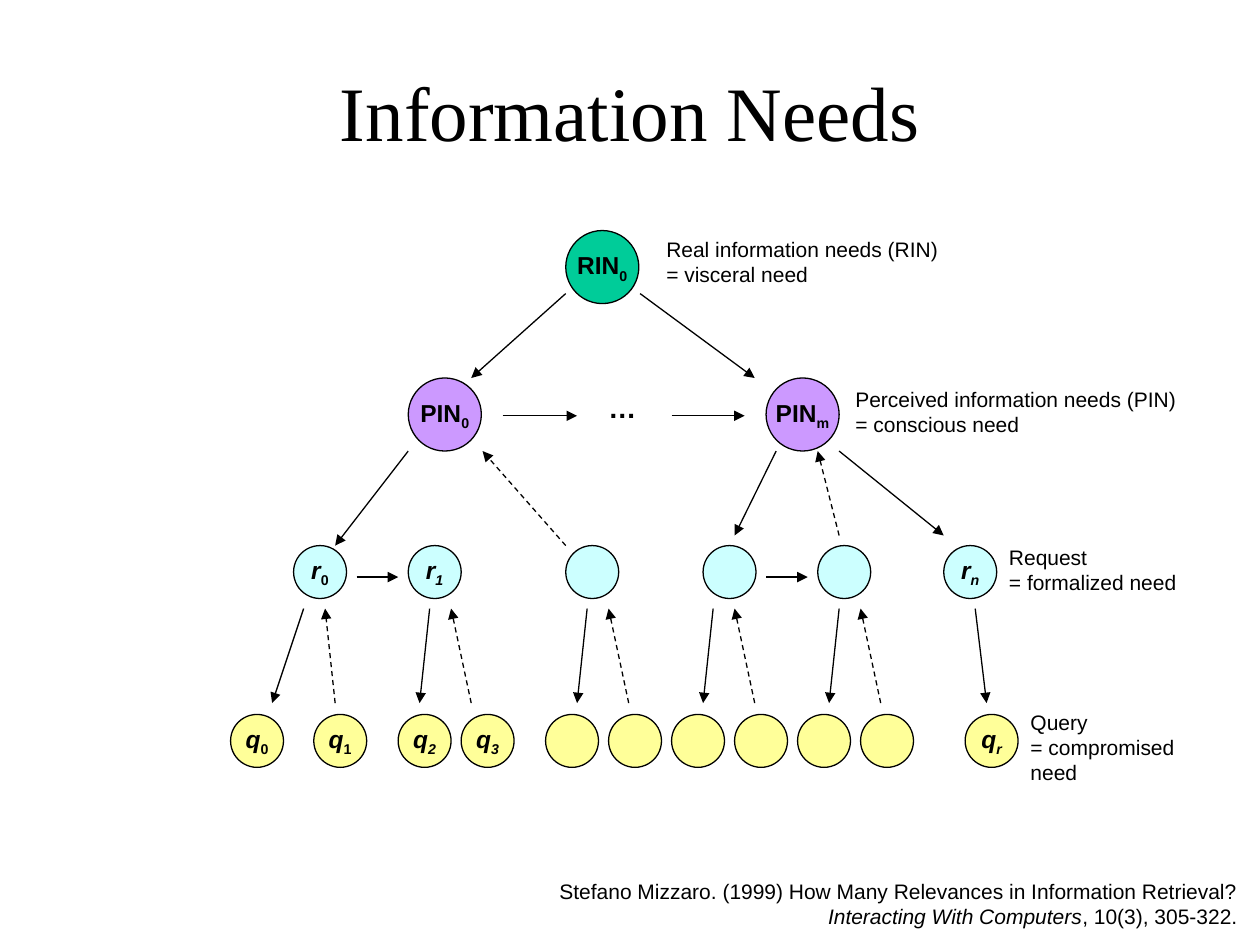
from lxml.etree import SubElement
from pptx import Presentation
from pptx.dml.color import RGBColor
from pptx.enum.dml import MSO_LINE
from pptx.enum.shapes import MSO_CONNECTOR, MSO_SHAPE
from pptx.enum.text import MSO_ANCHOR, PP_ALIGN
from pptx.oxml.ns import qn
from pptx.util import Inches, Pt

BLACK = "000000"
GREEN, PURPLE, CYAN, YELLOW = "00CC99", "CC99FF", "CCFFFF", "FFFF99"
LARGE, SMALL = 0.58, 0.42
PIN_Y, REQUEST_Y, QUERY_Y = 3, 4.33, 5.67
REQUEST_FOOT, QUERY_HEAD = 4.83, 5.58

PINS = [(3.24, "0"), (6.08, "m")]
REQUESTS = [
    (2.33, "r", "0"), (3.24, "r", "1"), (4.49, "", ""),
    (5.58, "", ""), (6.49, "", ""), (7.49, "r", "n"),
]
QUERIES = [
    (1.83, "q", "0"), (2.49, "q", "1"), (3.16, "q", "2"), (3.66, "q", "3"),
    *[(4.33 + 0.5 * i, "", "") for i in range(6)],
    (7.66, "q", "r"),
]
UPRIGHT_SUBSCRIPTS = {"r0", "q0", "q1"}

SOLID_ARROWS = [
    (4.49, 2.33, 3.74, 3), (5.08, 2.33, 5.99, 3),
    (3.99, 3.3, 4.58, 3.3), (5.33, 3.3, 5.91, 3.3),
    (3.24, 3.58, 2.66, 4.33), (6.16, 3.58, 5.83, 4.25),
    (6.66, 3.58, 7.49, 4.25),
    (2.83, 4.58, 3.16, 4.58), (6.08, 4.58, 6.41, 4.58),
    (2.41, REQUEST_FOOT, 2.16, QUERY_HEAD),
    (7.74, REQUEST_FOOT, 7.83, QUERY_HEAD),
]
DASHED_ARROWS = [
    (4.49, 4.33, 3.83, 3.58), (6.66, 4.25, 6.49, 3.58),
    (2.66, QUERY_HEAD, 2.58, REQUEST_FOOT),
]
REQUEST_ARROW_X = [3.41, 4.66, 5.66, 6.66]

LABELS = [
    (5.19, 1.83, 2.4, "Real information needs (RIN)", "= visceral need"),
    (6.69, 3.02, 2.79, "Perceived information needs (PIN)", "= conscious need"),
    (7.91, 4.27, 1.6, "Request", "= formalized need"),
    (8.08, 5.58, 1.75, "Query", "= compromised need"),
]


def rgb(color):
    return RGBColor.from_string(color)


def style(p, size, name="Arial", align=PP_ALIGN.LEFT, bold=False):
    p.alignment = align
    p.font.size = Pt(size)
    p.font.name = name
    p.font.bold = bold
    p.font.color.rgb = rgb(BLACK)


def add_text(s, x, y, w, h, lines, size, **options):
    tf = s.shapes.add_textbox(Inches(x), Inches(y), Inches(w), Inches(h)).text_frame
    tf.word_wrap = True
    tf.text = "\n".join(lines)
    for p in tf.paragraphs:
        style(p, size, **options)
    return tf


def add_node(s, x, y, size, fill, name="", subscript="", italic=False):
    sp = s.shapes.add_shape(
        MSO_SHAPE.OVAL, Inches(x), Inches(y), Inches(size), Inches(size)
    )
    sp.shadow.inherit = False
    sp.fill.solid()
    sp.fill.fore_color.rgb = rgb(fill)
    sp.line.color.rgb = rgb(BLACK)
    sp.line.width = Pt(0.75)
    if not name:
        return
    tf = sp.text_frame
    tf.word_wrap = False
    tf.vertical_anchor = MSO_ANCHOR.MIDDLE
    p = tf.paragraphs[0]
    style(p, 14, align=PP_ALIGN.CENTER, bold=True)
    r = p.add_run()
    r.text = name
    r.font.italic = italic
    r = p.add_run()
    r.text = subscript
    r.font.italic = italic and name + subscript not in UPRIGHT_SUBSCRIPTS
    r.font._element.set("baseline", "-25000")


def add_arrow(s, x1, y1, x2, y2, dashed=False):
    line = s.shapes.add_connector(
        MSO_CONNECTOR.STRAIGHT, Inches(x1), Inches(y1), Inches(x2), Inches(y2)
    )
    line.line.color.rgb = rgb(BLACK)
    line.line.width = Pt(0.75)
    if dashed:
        line.line.dash_style = MSO_LINE.DASH
    SubElement(line.line._get_or_add_ln(), qn("a:tailEnd"), type="triangle")
    SubElement(line._element.spPr, qn("a:effectLst"))


def add_nodes(s):
    add_node(s, 4.49, 1.83, LARGE, GREEN, "RIN", "0")
    for x, subscript in PINS:
        add_node(s, x, PIN_Y, LARGE, PURPLE, "PIN", subscript)
    for row, y, fill in [(REQUESTS, REQUEST_Y, CYAN), (QUERIES, QUERY_Y, YELLOW)]:
        for x, name, subscript in row:
            add_node(s, x, y, SMALL, fill, name, subscript, italic=True)


def add_arrows(s):
    for ends in SOLID_ARROWS:
        add_arrow(s, *ends)
    for ends in DASHED_ARROWS:
        add_arrow(s, *ends, dashed=True)
    for x in REQUEST_ARROW_X:
        add_arrow(s, x, REQUEST_FOOT, x - 0.08, QUERY_HEAD)
        add_arrow(s, x + 0.33, QUERY_HEAD, x + 0.17, REQUEST_FOOT, dashed=True)


def add_citation(s):
    tf = add_text(s, 4, 6.92, 5.92, 0.5, [""], 12, align=PP_ALIGN.RIGHT)
    p = tf.paragraphs[0]
    for text, italic in [
        ("Stefano Mizzaro. (1999) How Many Relevances in Information Retrieval? ", False),
        ("Interacting With Computers", True),
        (", 10(3), 305-322.", False),
    ]:
        r = p.add_run()
        r.text = text
        r.font.italic = italic


def main():
    prs = Presentation()
    prs.slide_width, prs.slide_height = Inches(10), Inches(7.5)
    s = prs.slides.add_slide(prs.slide_layouts[6])
    title = add_text(
        s, 0.75, 0.25, 8.5, 1.25, ["Information Needs"], 44,
        name="Times New Roman", align=PP_ALIGN.CENTER,
    )
    title.vertical_anchor = MSO_ANCHOR.MIDDLE
    add_nodes(s)
    add_arrows(s)
    add_text(s, 4.73, 3.05, 0.42, 0.37, ["…"], 16, bold=True)
    for x, y, w, *lines in LABELS:
        add_text(s, x, y, w, 0.5, lines, 12)
    add_citation(s)
    prs.save("out.pptx")


if __name__ == "__main__":
    main()
